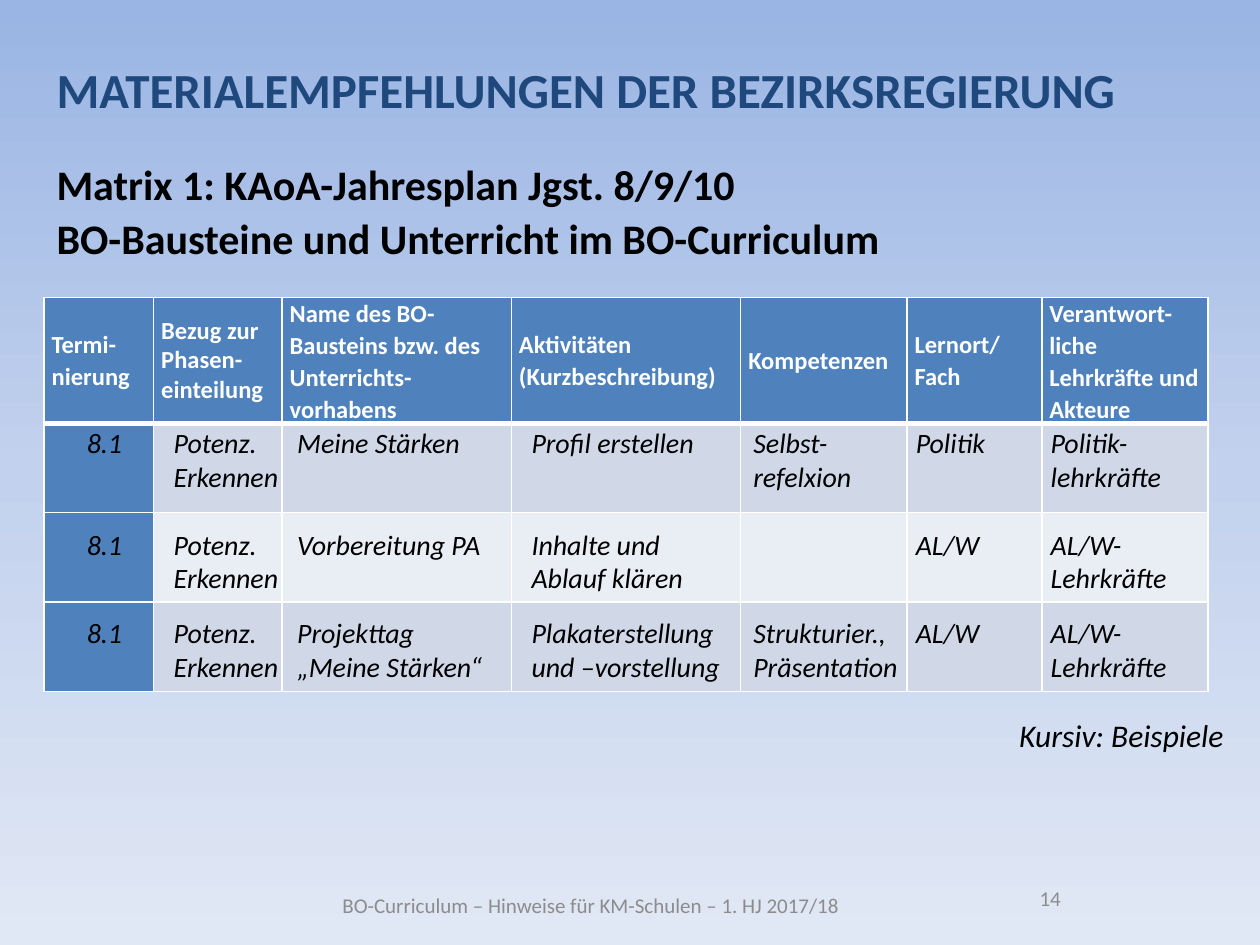
from copy import deepcopy

from lxml import etree
from pptx import Presentation
from pptx.dml.color import RGBColor
from pptx.enum import text as t
from pptx.oxml.ns import qn
from pptx.util import Inches, Pt

COLORS = {
    "sky": "9AB5E4", "mist": "C2D1ED", "haze": "E1E8F5",
    "title": "1F497D", "black": "000000", "white": "FFFFFF", "gray": "8C8C8C",
    "header": "4F81BD", "dark_band": "D0D8E8", "light_band": "E9EDF4",
}
COLUMN_WIDTHS = [0.87, 1.02, 1.82, 1.82, 1.32, 1.07, 1.32]
ROW_HEIGHTS = [0.99, 0.71, 0.71, 0.71]
TAB_STOPS = [0.69, 1.67, 3.53, 5.29, 6.58, 7.65]
HEADERS = [
    "Termi-nierung",
    "Bezug zur\nPhasen-\neinteilung",
    "Name des BO-Bausteins bzw. des Unterrichts-vorhabens",
    "Aktivitäten (Kurzbeschreibung)",
    "Kompetenzen",
    "Lernort/\nFach",
    "Verantwort-liche\nLehrkräfte und Akteure",
]
EXAMPLES = [
    (0, ["8.1", "Potenz.", "Meine Stärken", "Profil erstellen", "Selbst-", "Politik", "Politik-"]),
    (0, ["", "Erkennen", "", "", "refelxion", "", "lehrkräfte"]),
    (19.5, ["8.1", "Potenz.", "Vorbereitung PA", "Inhalte und", "", "AL/W", "AL/W-"]),
    (0, ["", "Erkennen", "", "Ablauf klären", "", "", "Lehrkräfte"]),
    (12.2, ["8.1", "Potenz.", "Projekttag", "Plakaterstellung", "Strukturier.,", "AL/W", "AL/W-"]),
    (0, ["", "Erkennen", "„Meine Stärken“", "und –vorstellung", "Präsentation", "", "Lehrkräfte"]),
]


def color(name):
    return RGBColor.from_string(COLORS[name])


def style_text(frame, size, shade, bold=False, italic=False, align=t.PP_ALIGN.LEFT, spacing=1.0):
    for para in frame.paragraphs:
        para.alignment = align
        para.line_spacing = spacing
        for span in para.runs:
            span.font.name = "Calibri"
            span.font.size = Pt(size)
            span.font.bold = bold
            span.font.italic = italic
            span.font.color.rgb = color(shade)


def paint_background(page):
    fill = page.background.fill
    fill.gradient()
    fill.gradient_angle = 270
    stop_list = page.element.find(".//" + qn("a:gsLst"))
    stop_list.append(deepcopy(stop_list[0]))
    for stop, name, position in zip(fill.gradient_stops, ("sky", "mist", "haze"), (0, 0.5, 1)):
        stop.color.rgb = color(name)
        stop.position = position


def add_title(page, content):
    title = page.shapes.title
    title.left, title.top, title.width, title.height = map(Inches, (0.35, 0.42, 9.65, 0.57))
    frame = title.text_frame
    frame.text = content
    frame.auto_size = t.MSO_AUTO_SIZE.NONE
    frame.vertical_anchor = t.MSO_ANCHOR.TOP
    style_text(frame, 28, "title", bold=True)


def add_text(page, place, content, size, shade, wrap=True, anchor=t.MSO_ANCHOR.TOP, **style):
    frame = page.shapes.add_textbox(*map(Inches, place)).text_frame
    frame.word_wrap = wrap
    frame.vertical_anchor = anchor
    frame.text = content
    style_text(frame, size, shade, **style)
    return frame


def add_border(cell, side, width):
    line = etree.Element(qn("a:ln" + side), w=str(Pt(width)))
    solid = etree.SubElement(line, qn("a:solidFill"))
    etree.SubElement(solid, qn("a:srgbClr"), val=COLORS["white"])
    cell._tc.get_or_add_tcPr().append(line)


def format_cell(cell, row, column):
    for side in "LRTB":
        thick = (row, side) in ((0, "B"), (1, "T"))
        add_border(cell, side, 3 if thick else 1)
    band = "dark_band" if row % 2 else "light_band"
    cell.fill.solid()
    cell.fill.fore_color.rgb = color("header" if row == 0 or column == 0 else band)


def add_matrix(page):
    place = (0.35, 2.36, sum(COLUMN_WIDTHS), sum(ROW_HEIGHTS))
    table = page.shapes.add_table(len(ROW_HEIGHTS), len(COLUMN_WIDTHS), *map(Inches, place)).table
    for column, width in zip(table.columns, COLUMN_WIDTHS):
        column.width = Inches(width)
    for row, height in zip(table.rows, ROW_HEIGHTS):
        row.height = Inches(height)
    for row in range(len(ROW_HEIGHTS)):
        for column in range(len(COLUMN_WIDTHS)):
            format_cell(table.cell(row, column), row, column)
    for column, header in enumerate(HEADERS):
        cell = table.cell(0, column)
        cell.text_frame.text = header
        cell.vertical_anchor = t.MSO_ANCHOR.MIDDLE
        cell.margin_left = cell.margin_right = Inches(0.06)
        cell.margin_top = cell.margin_bottom = 0
        style_text(cell.text_frame, 14, "white", bold=True, spacing=0.99 if column == 1 else 1.07)


def add_examples(page):
    content = "\n".join("\t".join(entries).rstrip() for _, entries in EXAMPLES)
    frame = add_text(page, (0.59, 3.33, 8.98, 2.15), content, 16, "black", italic=True)
    for para, (gap, _) in zip(frame.paragraphs, EXAMPLES):
        para.space_before = Pt(gap)
        tabs = etree.SubElement(para._p.get_or_add_pPr(), qn("a:tabLst"))
        for stop in TAB_STOPS:
            etree.SubElement(tabs, qn("a:tab"), pos=str(Inches(stop)), algn="l")


def main():
    deck = Presentation()
    deck.slide_width, deck.slide_height = Inches(10), Inches(7.5)
    page = deck.slides.add_slide(deck.slide_layouts[5])
    paint_background(page)
    add_title(page, "MATERIALEMPFEHLUNGEN DER BEZIRKSREGIERUNG")
    add_text(page, (2.17, 6.98, 5.04, 0.4), "BO-Curriculum – Hinweise für KM-Schulen – 1. HJ 2017/18",
             12, "gray", anchor=t.MSO_ANCHOR.MIDDLE, align=t.PP_ALIGN.CENTER)
    add_text(page, (7.17, 6.98, 2.33, 0.4), "14", 12, "gray", align=t.PP_ALIGN.CENTER)
    add_text(page, (0.35, 1.18, 9.65, 0.95),
             "Matrix 1: KAoA-Jahresplan Jgst. 8/9/10\nBO-Bausteine und Unterricht im BO-Curriculum",
             24, "black", bold=True, spacing=1.07)
    add_matrix(page)
    add_examples(page)
    add_text(page, (7.99, 5.63, 1.84, 0.4), "Kursiv: Beispiele", 18, "black", wrap=False, italic=True)
    deck.save("out.pptx")


if __name__ == "__main__":
    main()
